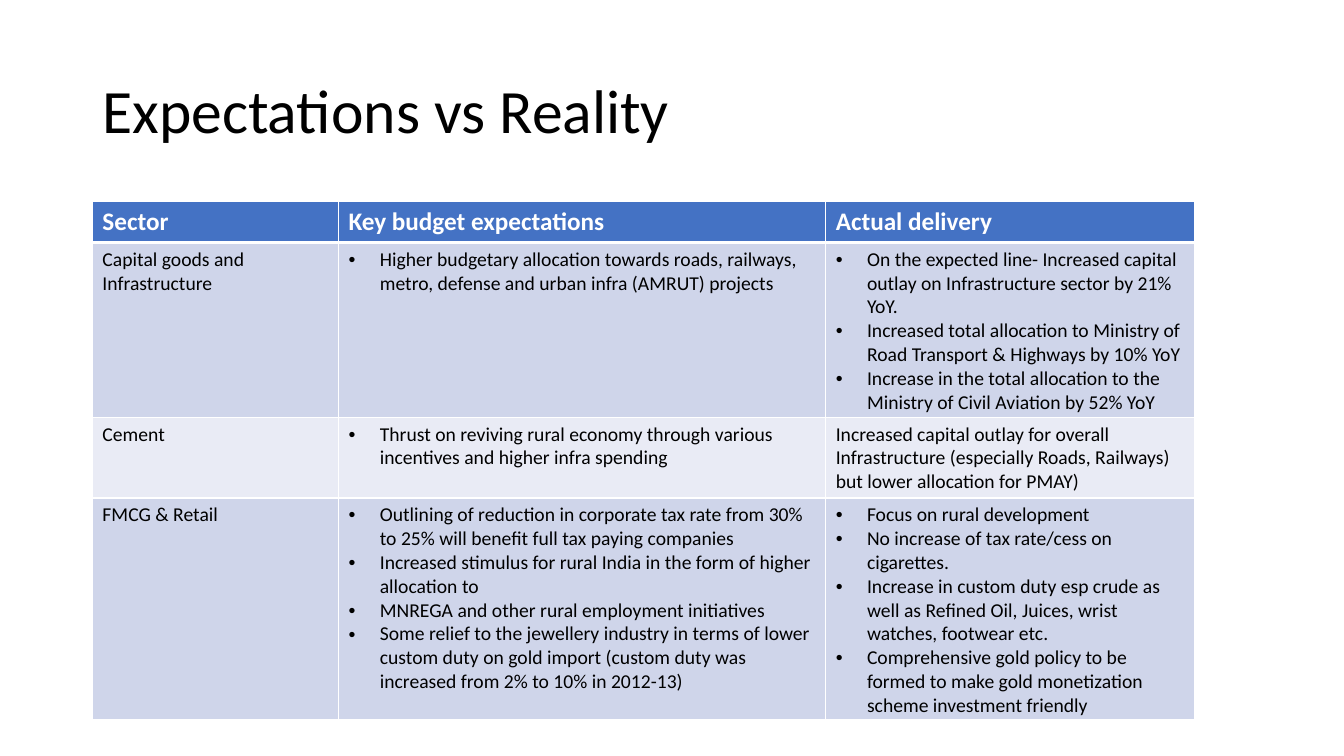
from dataclasses import dataclass
from typing import Any

from lxml.etree import SubElement
from pptx import Presentation
from pptx.dml.color import RGBColor
from pptx.enum.text import MSO_ANCHOR as Anchor
from pptx.oxml.ns import qn
from pptx.util import Inches, Pt

BLACK = RGBColor(0x00, 0x00, 0x00)
WHITE = RGBColor(0xFF, 0xFF, 0xFF)
BLUE = RGBColor(0x44, 0x72, 0xC4)
BAND_DARK = RGBColor(0xCF, 0xD5, 0xEA)
BAND_LIGHT = RGBColor(0xE9, 0xEB, 0xF5)

GRID_COLUMNS, GRID_ROWS = 160, 90
BULLET_INDENT = Inches(0.31)

HEADINGS = ["Sector", "Key budget expectations", "Actual delivery"]
SECTORS = [
    (
        "Capital goods and\nInfrastructure",
        ["Higher budgetary allocation towards roads, railways, metro, defense and urban infra (AMRUT) projects"],
        [
            "On the expected line- Increased capital outlay on Infrastructure sector by 21% YoY.",
            "Increased total allocation to Ministry of Road Transport & Highways by 10% YoY",
            "Increase in the total allocation to the Ministry of Civil Aviation by 52% YoY",
        ],
    ),
    (
        "Cement",
        ["Thrust on reviving rural economy through various incentives and higher infra spending"],
        "Increased capital outlay for overall Infrastructure (especially Roads, Railways) "
        "but lower allocation for PMAY)",
    ),
    (
        "FMCG & Retail",
        [
            "Outlining of reduction in corporate tax rate from 30% to 25% will benefit full tax paying companies",
            "Increased stimulus for rural India in the form of higher allocation to",
            "MNREGA and other rural employment initiatives",
            "Some relief to the jewellery industry in terms of lower custom duty on gold import "
            "(custom duty was increased from 2% to 10% in 2012-13)",
        ],
        [
            "Focus on rural development",
            "No increase of tax rate/cess on cigarettes.",
            "Increase in custom duty esp crude as well as Refined Oil, Juices, wrist watches, footwear etc.",
            "Comprehensive gold policy to be formed to make gold monetization scheme investment friendly",
        ],
    ),
]


@dataclass
class SlideBuilder:
    presentation: Any
    slide: Any
    font: str = "Calibri"
    title_size: int = 44
    heading_size: int = 18
    body_size: int = 14

    def columns(self, count):
        return round(self.presentation.slide_width * count / GRID_COLUMNS)

    def rows(self, count):
        return round(self.presentation.slide_height * count / GRID_ROWS)

    def box(self, left, top, width, height):
        return self.columns(left), self.rows(top), self.columns(width), self.rows(height)

    def style_runs(self, paragraph, size, color, bold=False):
        for run in paragraph.runs:
            run.font.name = self.font
            run.font.size = Pt(size)
            run.font.bold = bold
            run.font.color.rgb = color

    def title(self, text, *place):
        frame = self.slide.shapes.add_textbox(*self.box(*place)).text_frame
        frame.word_wrap = True
        frame.vertical_anchor = Anchor.MIDDLE
        frame.text = text
        paragraph = frame.paragraphs[0]
        paragraph.line_spacing = 0.9
        self.style_runs(paragraph, self.title_size, BLACK)

    def bullet(self, paragraph):
        properties = paragraph._p.get_or_add_pPr()
        properties.set("marL", str(BULLET_INDENT))
        properties.set("indent", str(-BULLET_INDENT))
        SubElement(properties, qn("a:buFont"), typeface="Arial")
        SubElement(properties, qn("a:buChar"), char="•")

    def borders(self, cell, top, bottom):
        properties = cell._tc.get_or_add_tcPr()
        for side, points in (("L", 1), ("R", 1), ("T", top), ("B", bottom)):
            line = SubElement(properties, qn(f"a:ln{side}"), w=str(Pt(points)))
            fill = SubElement(line, qn("a:solidFill"))
            SubElement(fill, qn("a:srgbClr"), val=str(WHITE))

    def cell(self, cell, content, fill, row_index):
        is_heading = row_index == 0
        self.borders(cell, 3 if row_index == 1 else 1, 3 if is_heading else 1)
        cell.fill.solid()
        cell.fill.fore_color.rgb = fill
        has_bullets = isinstance(content, list)
        cell.text_frame.text = "\n".join(content) if has_bullets else content
        size = self.heading_size if is_heading else self.body_size
        for paragraph in cell.text_frame.paragraphs:
            self.style_runs(paragraph, size, WHITE if is_heading else BLACK, is_heading)
            if has_bullets:
                self.bullet(paragraph)

    def table(self, contents, column_widths, row_height, left, top, height):
        place = self.box(left, top, sum(column_widths), height)
        frame = self.slide.shapes.add_table(len(contents), len(column_widths), *place)
        table = frame.table
        for column, width in zip(table.columns, column_widths):
            column.width = self.columns(width)
        for row_index, (row, values) in enumerate(zip(table.rows, contents)):
            row.height = self.rows(row_height)
            band = BAND_DARK if row_index % 2 else BAND_LIGHT
            fill = band if row_index else BLUE
            for cell, content in zip(row.cells, values):
                self.cell(cell, content, fill, row_index)
        frame.height = self.rows(height)


def main():
    presentation = Presentation()
    presentation.slide_width = Inches(13.33)
    presentation.slide_height = Inches(7.5)
    slide = presentation.slides.add_slide(presentation.slide_layouts[6])
    builder = SlideBuilder(presentation, slide)
    builder.title("Expectations vs Reality", 11, 4.8, 138, 17.4)
    builder.table([HEADINGS, *SECTORS], [29.3, 58, 43.9], 4.87, left=11, top=24, height=61.7)
    presentation.save("out.pptx")


if __name__ == "__main__":
    main()
